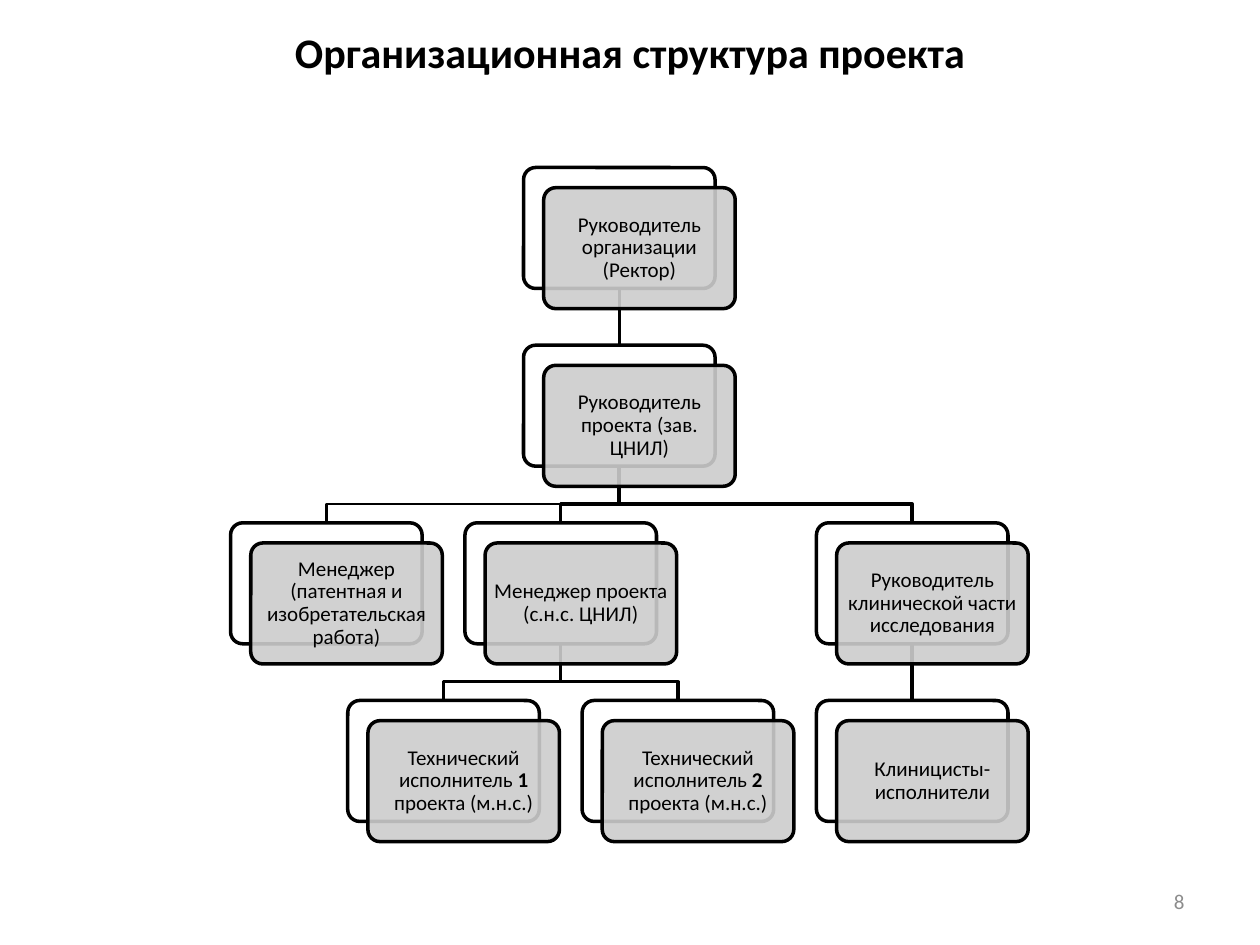
from lxml.etree import SubElement
from pptx import Presentation
from pptx.dml.color import RGBColor
from pptx.enum.shapes import MSO_CONNECTOR as Connector, MSO_SHAPE as Shape
from pptx.enum.text import MSO_ANCHOR as Anchor, PP_ALIGN as Align
from pptx.oxml.ns import qn
from pptx.util import Inches, Pt

CARD_WIDTH, CARD_HEIGHT = 1.52, 0.96
LEFT, TOP = 1.83, 1.33
COLUMN_STEP, ROW_STEP = 0.93, 1.41
FRONT_OFFSET = 0.16
BEND_DROP = 0.3


def color(hex_string):
    return RGBColor.from_string(hex_string)


class OrgChartSlide:
    font_name = "Calibri"
    ink = "000000"
    back_fill = "FFFFFF"
    front_fill = "CCCCCC"

    def __init__(self, slide):
        self.slide = slide

    def add_text(self, frame, pieces, size, align, ink=None, bold=False):
        frame.word_wrap = True
        paragraph = frame.paragraphs[0]
        paragraph.alignment = align
        paragraph.font.name = self.font_name
        paragraph.font.size = Pt(size)
        paragraph.font.bold = bold
        paragraph.font.color.rgb = color(ink or self.ink)
        for text, is_bold in pieces:
            run = paragraph.add_run()
            run.text = text
            if is_bold:
                run.font.bold = True
        return paragraph

    def label(self, box, text, size, align, anchor, ink=None, bold=False):
        shape = self.slide.shapes.add_textbox(*map(Inches, box))
        shape.text_frame.vertical_anchor = anchor
        self.add_text(shape.text_frame, [(text, False)], size, align, ink, bold)

    def outline(self, line, width):
        line.color.rgb = color(self.ink)
        line.width = Pt(width)

    def card(self, column, row, fill, offset=0):
        left = LEFT + column * COLUMN_STEP + offset
        top = TOP + row * ROW_STEP + offset
        box = map(Inches, (left, top, CARD_WIDTH, CARD_HEIGHT))
        shape = self.slide.shapes.add_shape(Shape.ROUNDED_RECTANGLE, *box)
        shape.adjustments[0] = 0.1
        shape.shadow.inherit = False
        shape.fill.solid()
        shape.fill.fore_color.rgb = color(fill)
        self.outline(shape.line, 2)
        return shape

    def back_card(self, column, row):
        return self.card(column, row, self.back_fill)

    def front_card(self, column, row, pieces):
        shape = self.card(column, row, self.front_fill, FRONT_OFFSET)
        fill_color = shape._element.spPr.find(qn("a:solidFill"))[0]
        SubElement(fill_color, qn("a:alpha"), val="90000")
        frame = shape.text_frame
        frame.vertical_anchor = Anchor.MIDDLE
        frame.margin_left = frame.margin_right = Inches(0.02)
        frame.margin_top = frame.margin_bottom = Inches(0.05)
        self.add_text(frame, pieces, 12, Align.CENTER).line_spacing = 0.9

    def straight_link(self, parent, child, width):
        link = self.slide.shapes.add_connector(Connector.STRAIGHT, 0, 0, 0, 0)
        link.begin_connect(parent, 2)
        link.end_connect(child, 0)
        self.outline(link.line, width)
        SubElement(link._element.spPr, qn("a:effectLst"))

    def bent_link(self, parent, child, width):
        start_x = parent.left + parent.width // 2
        end_x = child.left + child.width // 2
        start_y = parent.top + parent.height
        bend_y = start_y + Inches(BEND_DROP)
        builder = self.slide.shapes.build_freeform(start_x, start_y)
        builder.add_line_segments([(start_x, bend_y), (end_x, bend_y), (end_x, child.top)], close=False)
        shape = builder.convert_to_shape()
        shape.shadow.inherit = False
        shape.fill.background()
        self.outline(shape.line, width)

    def link(self, parent, child, width):
        draw = self.straight_link if parent.left == child.left else self.bent_link
        draw(parent, child, width)


ROLES = {
    "rector": (2.5, 0, [("Руководитель организации (Ректор)", False)]),
    "head": (2.5, 1, [("Руководитель проекта (зав. ЦНИЛ)", False)]),
    "patents": (0, 2, [("Менеджер (патентная и изобретательская работа)", False)]),
    "manager": (2, 2, [("Менеджер проекта (с.н.с. ЦНИЛ)", False)]),
    "technician_1": (1, 3, [("Технический исполнитель ", False), ("1", True), (" проекта (м.н.с.)", False)]),
    "technician_2": (3, 3, [("Технический исполнитель ", False), ("2 ", True), ("проекта (м.н.с.)", False)]),
    "clinical_head": (5, 2, [("Руководитель клинической части исследования", False)]),
    "clinicians": (5, 3, [("Клиницисты-исполнители", False)]),
}

LINKS = [
    ("clinical_head", "clinicians", 2),
    ("head", "clinical_head", 2),
    ("manager", "technician_2", 2),
    ("manager", "technician_1", 2),
    ("head", "manager", 2),
    ("head", "patents", 1.5),
    ("rector", "head", 2),
]


def main():
    presentation = Presentation()
    presentation.slide_width = Inches(10)
    presentation.slide_height = Inches(7.5)
    chart = OrgChartSlide(presentation.slides.add_slide(presentation.slide_layouts[6]))

    cards = {role: chart.back_card(column, row) for role, (column, row, _) in ROLES.items()}
    for parent, child, width in LINKS:
        chart.link(cards[parent], cards[child], width)
    for column, row, pieces in ROLES.values():
        chart.front_card(column, row, pieces)

    chart.label((0.5, 0.16, 9, 0.92), "Организационная структура проекта", 24,
                Align.CENTER, Anchor.TOP, bold=True)
    chart.label((7.17, 6.95, 2.33, 0.4), "8", 12, Align.RIGHT, Anchor.MIDDLE, ink="8C8C8C")
    presentation.save("out.pptx")


if __name__ == "__main__":
    main()
